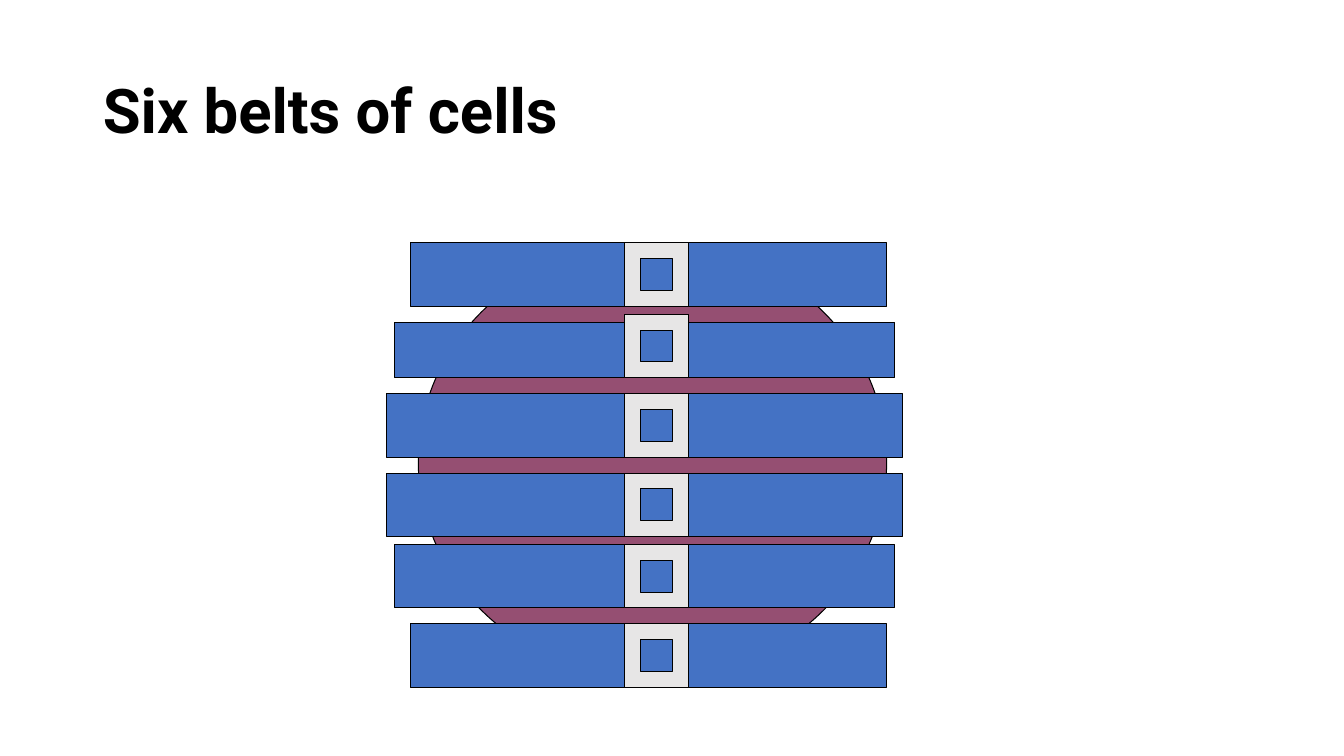
from pptx import Presentation
from pptx.dml.color import RGBColor
from pptx.enum.shapes import MSO_SHAPE
from pptx.enum.text import MSO_ANCHOR, PP_ALIGN
from pptx.util import Inches, Mm, Pt

BLACK = RGBColor(0x00, 0x00, 0x00)
CORE_PLUM = RGBColor(0x95, 0x4F, 0x72)
BELT_BLUE = RGBColor(0x44, 0x72, 0xC4)
TILE_GREY = RGBColor(0xE7, 0xE6, 0xE6)

# The drawing sits on a 2 mm grid that starts at the first belt's top left corner.
UNIT = Mm(2)
ORIGIN_LEFT, ORIGIN_TOP = Inches(4.07), Inches(2.41)
TILE_COLUMN, TILE_SIZE = 27, 8
CELL_INSET = 2
CELL_SIZE = TILE_SIZE - 2 * CELL_INSET

# column, row, width and height of each belt
BELTS = [
    (0, 0, 60, 8),
    (-2, 10, 63, 7),
    (-3, 19, 65, 8),
    (-3, 29, 65, 8),
    (-2, 38, 63, 8),
    (0, 48, 60, 8),
]

prs = Presentation()
prs.slide_width, prs.slide_height = Inches(13.33), Inches(7.5)
slide = prs.slides.add_slide(prs.slide_layouts[5])


def add_on_grid(outline, column, row, width, height, color):
    part = slide.shapes.add_shape(
        outline,
        ORIGIN_LEFT + column * UNIT, ORIGIN_TOP + row * UNIT,
        width * UNIT, height * UNIT,
    )
    part.shadow.inherit = False
    part.fill.solid()
    part.fill.fore_color.rgb = color
    part.line.color.rgb = BLACK
    part.line.width = Pt(0.75)


title = slide.shapes.title
title.left, title.top = Inches(0.92), Inches(0.4)
title.width, title.height = Inches(11.5), Inches(1.45)
title.text_frame.text = "Six belts of cells"
title.text_frame.vertical_anchor = MSO_ANCHOR.MIDDLE
heading = title.text_frame.paragraphs[0]
heading.alignment = PP_ALIGN.LEFT
heading.line_spacing = 0.9
heading.font.name = "Roboto"
heading.font.size = Pt(44)
heading.font.bold = True
heading.font.color.rgb = BLACK

add_on_grid(MSO_SHAPE.OVAL, 1, 0, 59, 55, CORE_PLUM)

for column, row, width, height in BELTS:
    add_on_grid(MSO_SHAPE.RECTANGLE, column, row, width, height, BELT_BLUE)

# Each tile stands on the bottom edge of its belt, with a cell in its middle.
for column, row, width, height in BELTS:
    tile_row = row + height - TILE_SIZE
    add_on_grid(MSO_SHAPE.RECTANGLE, TILE_COLUMN, tile_row,
                TILE_SIZE, TILE_SIZE, TILE_GREY)
    add_on_grid(MSO_SHAPE.RECTANGLE, TILE_COLUMN + CELL_INSET, tile_row + CELL_INSET,
                CELL_SIZE, CELL_SIZE, BELT_BLUE)

prs.save("out.pptx")
